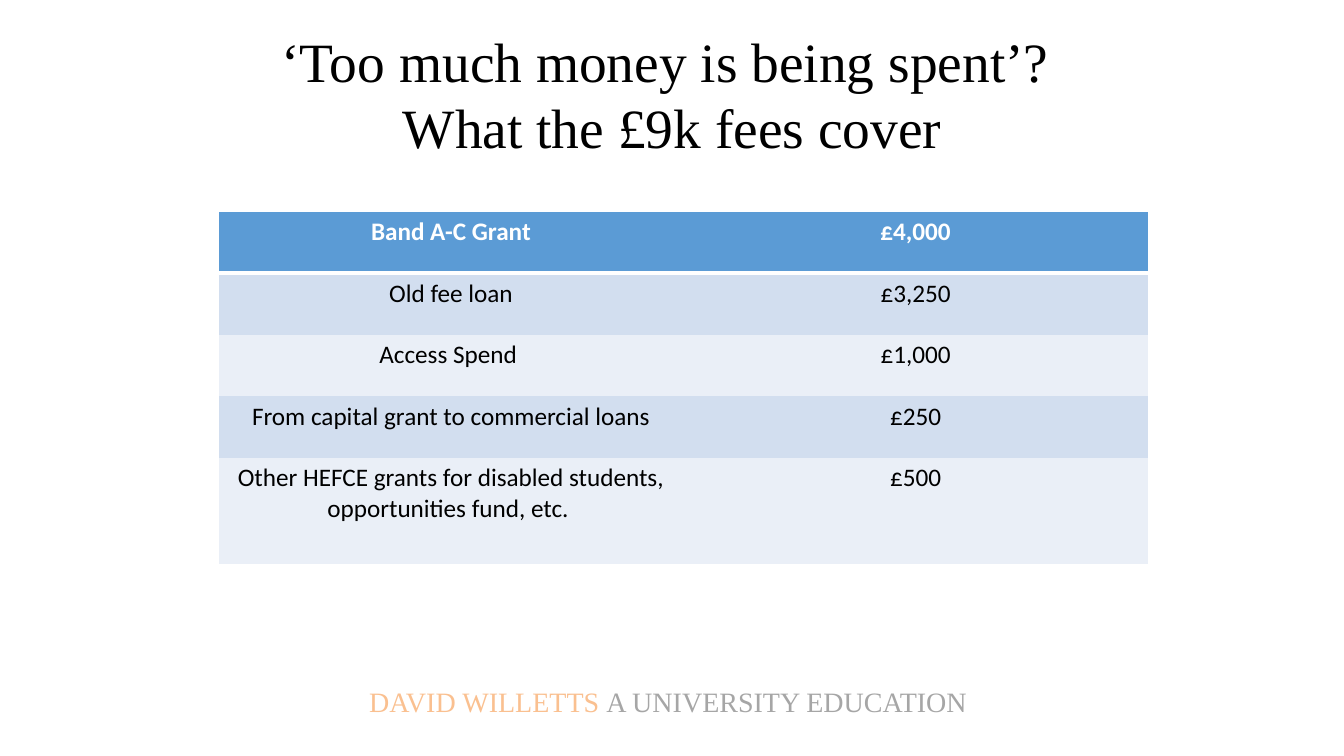
import pptx
import pptx.dml.color
import pptx.enum.text
import pptx.oxml
import pptx.oxml.ns
import pptx.util
from pptx.util import Cm

RGB = pptx.dml.color.RGBColor
WHITE = RGB(0xFF, 0xFF, 0xFF)
BLACK = RGB(0x00, 0x00, 0x00)
HEADER_BLUE = RGB(0x5B, 0x9B, 0xD5)
BANDS = RGB(0xD2, 0xDE, 0xEF), RGB(0xEA, 0xEF, 0xF7)
ORANGE = RGB(0xFA, 0xC0, 0x90)
GREY = RGB(0xA6, 0xA6, 0xA6)
SERIF, SANS = "Times New Roman", "Calibri"

FEE_COVER = [
    ("Band A-C Grant", "£4,000"),
    ("Old fee loan", "£3,250"),
    ("Access Spend ", "£1,000"),
    ("From capital grant to commercial loans", "£250"),
    ("Other HEFCE grants for disabled students, opportunities fund, etc. ", "£500"),
]


def add_text(paragraph, text, *, font, size, color, bold=False):
    """Append text to a centred paragraph; a line feed becomes a line break."""
    paragraph.alignment = pptx.enum.text.PP_ALIGN.CENTER
    for number, line in enumerate(text.split("\n")):
        if number:
            paragraph.add_line_break()
        run = paragraph.add_run()
        run.text = line
        run.font.name = font
        run.font.size = pptx.util.Pt(size)
        run.font.bold = bold
        run.font.color.rgb = color


def set_borders(cell, **widths):
    """Draw white borders of the given widths in points; the others are off."""
    properties = cell._tc.get_or_add_tcPr()
    for position, side in enumerate("LRTB"):
        width = widths.get(side, 0)
        fill = (f'<a:solidFill><a:srgbClr val="{WHITE}"/></a:solidFill>'
                if width else "<a:noFill/>")
        properties.insert(position, pptx.oxml.parse_xml(
            f'<a:ln{side} {pptx.oxml.ns.nsdecls("a")} '
            f'w="{pptx.util.Pt(width)}">{fill}</a:ln{side}>'))


class FeeSlide:
    def __init__(self, presentation):
        self.slide = presentation.slides.add_slide(presentation.slide_layouts[6])
        self.heading_style = {"font": SERIF, "size": 39.6, "color": BLACK}
        self.footer_style = {"font": SERIF, "size": 20}
        self.table_style = {"font": SANS, "size": 18}

    def text_frame(self, left, top, width, height):
        frame = self.slide.shapes.add_textbox(left, top, width, height).text_frame
        frame.word_wrap = True
        return frame

    def heading(self, text, *place):
        frame = self.text_frame(*place)
        frame.vertical_anchor = pptx.enum.text.MSO_ANCHOR.MIDDLE
        add_text(frame.paragraphs[0], text, **self.heading_style)

    def footer(self, parts, *place):
        line = self.text_frame(*place).paragraphs[0]
        line.space_before = pptx.util.Pt(4)
        for text, color in parts:
            add_text(line, text, color=color, **self.footer_style)

    def table(self, rows, heights, *place):
        table = self.slide.shapes.add_table(len(rows), len(rows[0]), *place).table
        for r, (values, height) in enumerate(zip(rows, heights)):
            table.rows[r].height = height
            header = r == 0
            for c, value in enumerate(values):
                cell = table.cell(r, c)
                cell.fill.solid()
                cell.fill.fore_color.rgb = HEADER_BLUE if header else BANDS[(r - 1) % 2]
                set_borders(cell, B=3 if header else 0, T=3 if r == 1 else 0)
                add_text(cell.text_frame.paragraphs[0], value, bold=header,
                         color=WHITE if header else BLACK, **self.table_style)


def main():
    presentation = pptx.Presentation()
    presentation.slide_width = Cm(33.87)
    presentation.slide_height = Cm(19.05)
    slide = FeeSlide(presentation)

    # Footer with author and book
    slide.footer([("DAVID WILLETTS ", ORANGE), ("A UNIVERSITY EDUCATION ", GREY)],
                 Cm(1.19), Cm(17.12), Cm(31.47), Cm(2.64))

    # What the fees cover; the last row is taller
    heights = [Cm(1.55)] * (len(FEE_COVER) - 1) + [Cm(2.67)]
    slide.table(FEE_COVER, heights, Cm(5.51), Cm(5.33), Cm(23.42), sum(heights))

    # Heading
    slide.heading("‘Too much money is being spent’? \nWhat the £9k fees cover",
                  Cm(1.7), Cm(0.76), Cm(30.48), Cm(3.18))

    presentation.save("out.pptx")


if __name__ == "__main__":
    main()
